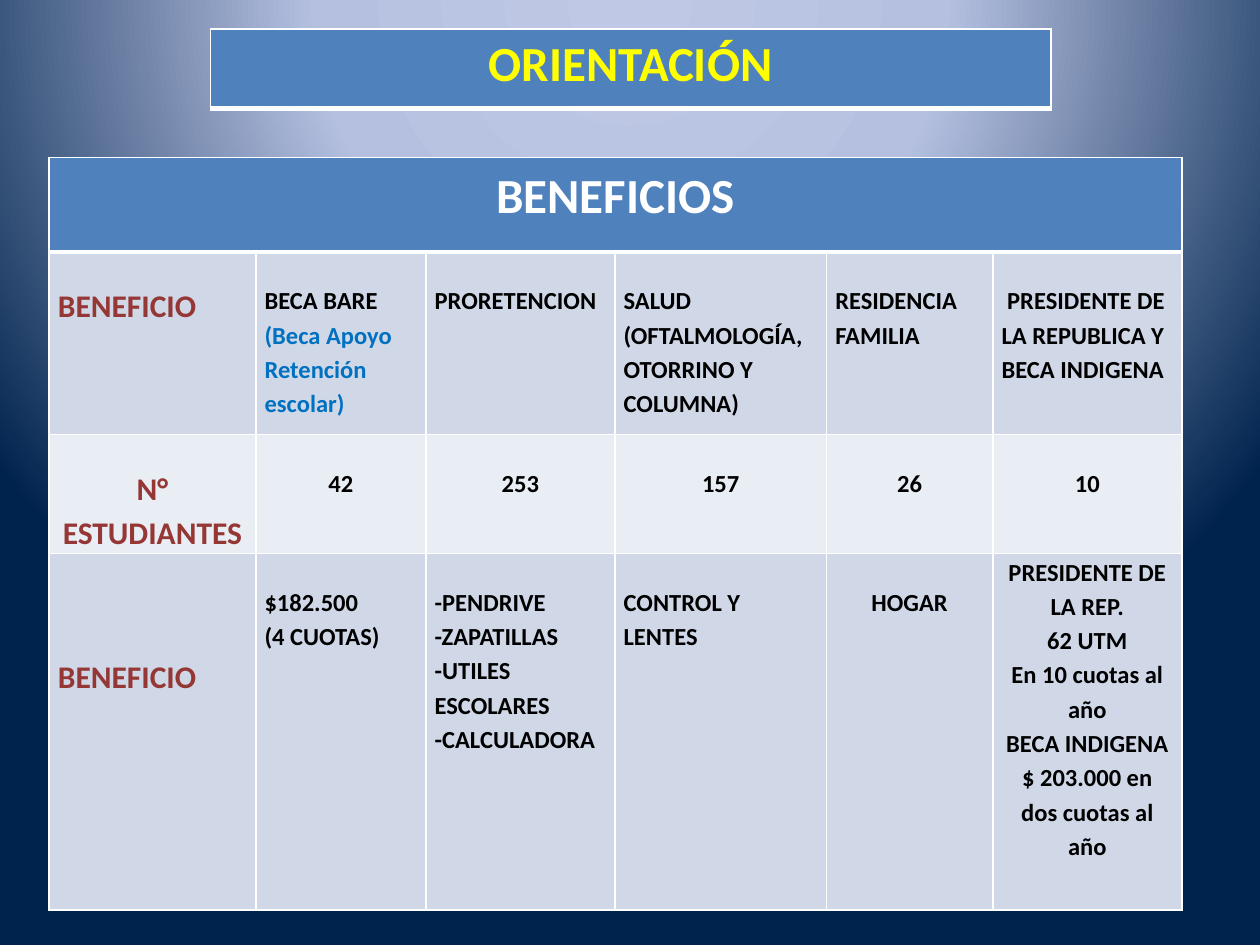
from dataclasses import dataclass

from pptx import Presentation
from pptx import util as u
from pptx.dml.color import RGBColor
from pptx.enum import text
from pptx.oxml import parse_xml
from pptx.oxml.ns import nsdecls


@dataclass(frozen=True)
class Theme:
    font: str = "Calibri"
    header: str = "4F81BD"
    band_dark: str = "D0D8E8"
    band_light: str = "E9EDF4"
    white: str = "FFFFFF"
    yellow: str = "FFFF00"
    black: str = "000000"
    blue: str = "0070C0"
    red: str = "953735"
    big: int = 28
    medium: int = 18
    small: int = 14
    thin: int = 1
    thick: int = 3
    backdrop: tuple = ((0, "BFC9E5"), (40, "B5C0E0"), (100, "00234D"))


THEME = Theme()
LEFT, CENTER = text.PP_ALIGN.LEFT, text.PP_ALIGN.CENTER
GAP = 0.24  # space above the text of most cells
LOW_GAP = 0.79  # space above the last row label


@dataclass(frozen=True)
class Line:
    words: str
    color: str = THEME.black


@dataclass(frozen=True)
class Entry:
    lines: tuple[Line, ...]
    size: int = THEME.small
    align: int = LEFT
    top: float = GAP
    side: float = 0.07
    bottom: float = 0
    spacing: float = 1.15


def entry(*words: str, color: str = THEME.black, **options) -> Entry:
    return Entry(tuple(Line(item, color) for item in words), **options)


def label(words: str, **options) -> Entry:
    return entry(words, color=THEME.red, size=THEME.medium, **options)


TITLE = entry("ORIENTACIÓN", color=THEME.yellow, size=THEME.big, align=CENTER,
              top=0.05, side=0.1, bottom=0.05, spacing=1)
HEADING = entry("BENEFICIOS", color=THEME.white, size=THEME.big, align=CENTER, top=0)
COLUMNS = (1.64, 1.35, 1.5, 1.68, 1.32, 1.5)
ROWS = (0.75, 1.45, 0.94, 2.83)

BENEFITS = (
    label("BENEFICIO"),
    Entry((Line("BECA BARE"), Line("(Beca Apoyo Retención escolar)", THEME.blue))),
    entry("PRORETENCION"),
    entry("SALUD", "(OFTALMOLOGÍA, OTORRINO Y COLUMNA)"),
    entry("RESIDENCIA FAMILIA"),
    entry(" PRESIDENTE DE LA REPUBLICA Y", "BECA INDIGENA"),
)
STUDENTS = (
    label("N° ESTUDIANTES", align=CENTER),
    *(entry(count, align=CENTER) for count in ("42", "253", "157", "26", "10")),
)
DETAILS = (
    label("BENEFICIO", top=LOW_GAP),
    entry("$182.500", "(4 CUOTAS)"),
    entry("-PENDRIVE", "-ZAPATILLAS", "-UTILES ESCOLARES", "-CALCULADORA"),
    entry("CONTROL Y LENTES"),
    entry("HOGAR", align=CENTER),
    entry("PRESIDENTE DE LA REP.", "62 UTM", "En 10 cuotas al año", "BECA INDIGENA",
          "$ 203.000 en dos cuotas al año", align=CENTER, top=0),
)


def paint_background(page) -> None:
    """Fill the page with a radial gradient."""
    page.background.fill.solid()
    stops = "".join(
        f'<a:gs pos="{place * 1000}"><a:srgbClr val="{color}"/></a:gs>'
        for place, color in THEME.backdrop)
    gradient = parse_xml(
        f'<a:gradFill {nsdecls("a")} rotWithShape="1"><a:gsLst>{stops}</a:gsLst>'
        '<a:path path="circle"><a:fillToRect l="50000" t="-80000" r="50000" b="180000"/>'
        '</a:path></a:gradFill>')
    properties = page.background._cSld.bg.bgPr
    properties.replace(properties[0], gradient)


def draw_borders(cell, top: int, bottom: int) -> None:
    """Draw white cell borders; widths are in points."""
    properties = cell._tc.get_or_add_tcPr()
    widths = {"lnL": THEME.thin, "lnR": THEME.thin, "lnT": top, "lnB": bottom}
    for index, (side, width) in enumerate(widths.items()):
        properties.insert(index, parse_xml(
            f'<a:{side} {nsdecls("a")} w="{u.Pt(width)}"><a:solidFill>'
            f'<a:srgbClr val="{THEME.white}"/></a:solidFill></a:{side}>'))


def fill_cell(cell, content: Entry, fill: str) -> None:
    """Write an entry into a cell."""
    cell.fill.solid()
    cell.fill.fore_color.rgb = RGBColor.from_string(fill)
    cell.margin_left = cell.margin_right = u.Inches(content.side)
    cell.margin_top = u.Inches(content.top)
    cell.margin_bottom = u.Inches(content.bottom)
    cell.text = "\n".join(line.words for line in content.lines)
    for para, line in zip(cell.text_frame.paragraphs, content.lines):
        para.alignment = content.align
        para.line_spacing = content.spacing
        para.font.name = THEME.font
        para.font.size = u.Pt(content.size)
        para.font.bold = True
        para.font.color.rgb = RGBColor.from_string(line.color)


def add_grid(page, left: float, top: float, columns: tuple, rows: tuple):
    """Add a table with the given column widths and row heights."""
    frame = page.shapes.add_table(
        len(rows), len(columns), u.Inches(left), u.Inches(top),
        u.Inches(sum(columns)), u.Inches(sum(rows)))
    for column, width in zip(frame.table.columns, columns):
        column.width = u.Inches(width)
    for row, height in zip(frame.table.rows, rows):
        row.height = u.Inches(height)
    return frame.table


def add_benefits(page) -> None:
    table = add_grid(page, 0.39, 1.25, COLUMNS, ROWS)

    # Heading across all columns
    table.cell(0, 0).merge(table.cell(0, len(COLUMNS) - 1))
    fill_cell(table.cell(0, 0), HEADING, THEME.header)
    for column in range(len(COLUMNS)):
        draw_borders(table.cell(0, column), THEME.thin, THEME.thick)

    # Banded body
    bands = (THEME.band_dark, THEME.band_light, THEME.band_dark)
    for row, (entries, band) in enumerate(zip((BENEFITS, STUDENTS, DETAILS), bands), 1):
        for column, content in enumerate(entries):
            cell = table.cell(row, column)
            fill_cell(cell, content, band)
            draw_borders(cell, THEME.thick if row == 1 else THEME.thin, THEME.thin)


def add_title(page) -> None:
    cell = add_grid(page, 1.67, 0.23, (6.67,), (0.63,)).cell(0, 0)
    fill_cell(cell, TITLE, THEME.header)
    draw_borders(cell, THEME.thin, THEME.thick)


def main() -> None:
    deck = Presentation()
    deck.slide_width, deck.slide_height = u.Inches(10), u.Inches(7.5)
    page = deck.slides.add_slide(deck.slide_layouts[6])
    paint_background(page)
    add_benefits(page)
    add_title(page)
    deck.save("out.pptx")


if __name__ == "__main__":
    main()
